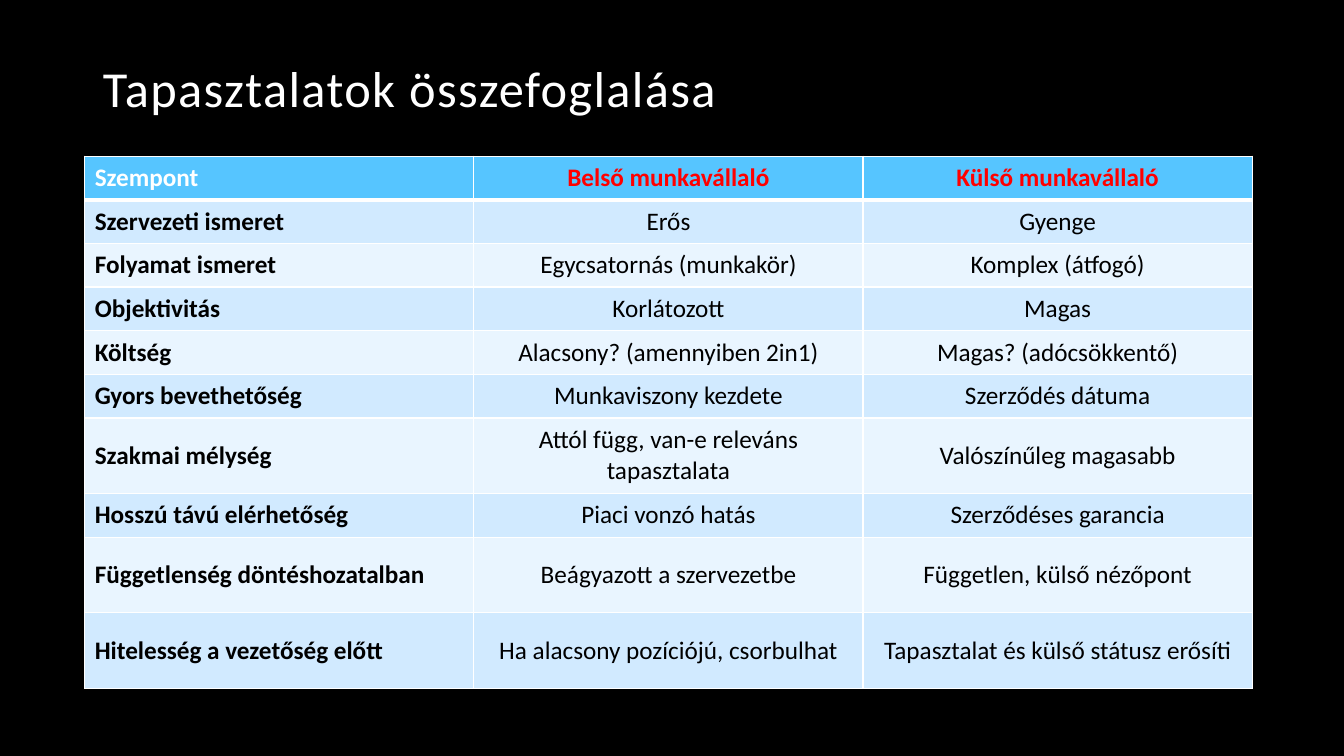
"""Build a slide with a table comparing internal and external employees."""
from lxml import etree
from pptx import Presentation
from pptx.dml.color import RGBColor
from pptx.enum.text import MSO_ANCHOR, PP_ALIGN
from pptx.oxml.ns import qn
from pptx.util import Inches, Pt

MIDDLE, BOTTOM = MSO_ANCHOR.MIDDLE, MSO_ANCHOR.BOTTOM
LEFT, CENTER = PP_ALIGN.LEFT, PP_ALIGN.CENTER
FONT = "Calibri"
COLORS = {"black": "000000", "white": "FFFFFF", "red": "FF0000",
          "header": "56C5FF", "odd": "D1EAFF", "even": "E9F5FF"}
ROWS = [
    ("Szempont", "Belső munkavállaló", "Külső munkavállaló"),
    ("Szervezeti ismeret", "Erős", "Gyenge"),
    ("Folyamat ismeret", "Egycsatornás (munkakör)", "Komplex (átfogó)"),
    ("Objektivitás", "Korlátozott", "Magas"),
    ("Költség", "Alacsony? (amennyiben 2in1)", "Magas? (adócsökkentő)"),
    ("Gyors bevethetőség", "Munkaviszony kezdete", "Szerződés dátuma"),
    ("Szakmai mélység", "Attól függ, van-e releváns tapasztalata",
     "Valószínűleg magasabb"),
    ("Hosszú távú elérhetőség", "Piaci vonzó hatás", "Szerződéses garancia"),
    ("Függetlenség döntéshozatalban", "Beágyazott a szervezetbe",
     "Független, külső nézőpont"),
    ("Hitelesség a vezetőség előtt", "Ha alacsony pozíciójú, csorbulhat",
     "Tapasztalat és külső státusz erősíti"),
]
TALL_ROWS = (6, 8, 9)
WIDTH, HEIGHT, TALL = 11.58, 5.28, 0.75
SHORT = (HEIGHT - TALL * len(TALL_ROWS)) / (len(ROWS) - len(TALL_ROWS))


def add_run(p, text, size, color, bold=False):
    r = p.add_run()
    r.text = text
    r.font.name = FONT
    r.font.size = Pt(size)
    r.font.bold = bold
    r.font.color.rgb = RGBColor.from_string(COLORS[color])
    return r


def add_border(cell, side, width):
    ln = etree.SubElement(cell._tc.get_or_add_tcPr(), qn(f"a:ln{side}"),
                          w=str(Pt(width)))
    fill = etree.SubElement(ln, qn("a:solidFill"))
    etree.SubElement(fill, qn("a:srgbClr"), val=COLORS["white"])


prs = Presentation()
prs.slide_width, prs.slide_height = Inches(13.33), Inches(7.5)
s = prs.slides.add_slide(prs.slide_layouts[5])
s.background.fill.solid()
s.background.fill.fore_color.rgb = RGBColor.from_string(COLORS["black"])

title = s.shapes.title
title.left, title.top = Inches(0.92), Inches(0.65)
title.width, title.height = Inches(10.75), Inches(0.58)
tf = title.text_frame
tf.vertical_anchor = BOTTOM
p = tf.paragraphs[0]
p.alignment = LEFT
p.line_spacing = 0.9
r = add_run(p, "Tapasztalatok összefoglalása", 36, "white")
r.font._element.set("spc", "100")

table = s.shapes.add_table(len(ROWS), len(ROWS[0]), Inches(0.84), Inches(1.55),
                           Inches(WIDTH), Inches(HEIGHT)).table
for col in table.columns:
    col.width = Inches(WIDTH / len(ROWS[0]))

for i, row in enumerate(ROWS):
    table.rows[i].height = Inches(TALL if i in TALL_ROWS else SHORT)
    band = "header" if i == 0 else "odd" if i % 2 else "even"
    for j, text in enumerate(row):
        cell = table.cell(i, j)
        cell.vertical_anchor = MIDDLE
        for side in "LRTB":
            heavy = (i, side) in ((0, "B"), (1, "T"))
            add_border(cell, side, 3 if heavy else 1)
        cell.fill.solid()
        cell.fill.fore_color.rgb = RGBColor.from_string(COLORS[band])
        p = cell.text_frame.paragraphs[0]
        p.alignment = CENTER if j else LEFT
        color = "black" if i else "red" if j else "white"
        add_run(p, text, 18, color, bold=i == 0 or j == 0)

prs.save("out.pptx")
